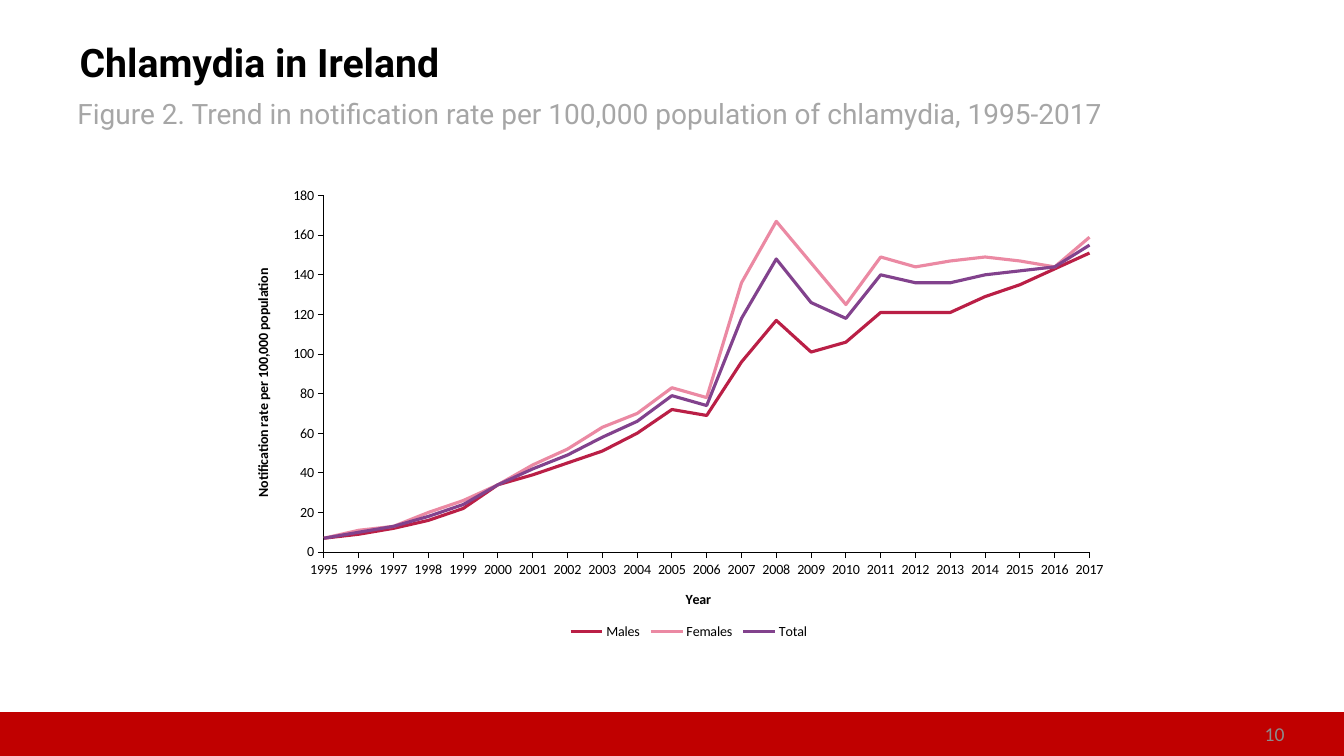
from dataclasses import dataclass

from lxml import etree
from pptx import Presentation
from pptx.chart.axis import CategoryAxis, ValueAxis
from pptx.chart.chart import Chart
from pptx.chart.data import CategoryChartData
from pptx.dml.color import RGBColor
from pptx.enum.chart import XL_CHART_TYPE, XL_LEGEND_POSITION, XL_TICK_MARK
from pptx.enum.shapes import MSO_SHAPE
from pptx.enum.text import MSO_ANCHOR, PP_ALIGN
from pptx.oxml.ns import qn
from pptx.slide import Slide
from pptx.text.text import Font
from pptx.util import Inches, Pt

LINE_CHART = XL_CHART_TYPE.LINE
LEGEND_BOTTOM = XL_LEGEND_POSITION.BOTTOM
TICK_OUTSIDE, TICK_NONE = XL_TICK_MARK.OUTSIDE, XL_TICK_MARK.NONE
RECTANGLE = MSO_SHAPE.RECTANGLE
TOP, MIDDLE = MSO_ANCHOR.TOP, MSO_ANCHOR.MIDDLE
LEFT, RIGHT = PP_ALIGN.LEFT, PP_ALIGN.RIGHT


@dataclass(frozen=True)
class Theme:
    heading_font: str = "Roboto"
    body_font: str = "Calibri"
    black: str = "000000"
    subtitle_grey: str = "A6A6A6"
    number_grey: str = "8C8C8C"
    footer_red: str = "C00000"
    title_size: float = 28
    subtitle_size: float = 20
    number_size: float = 14
    chart_size: float = 10
    footer_border: float = 2
    axis_width: float = 0.75
    trend_width: float = 2.25


@dataclass(frozen=True)
class Box:
    left: float
    top: float
    width: float
    height: float

    def inches(self) -> tuple[Inches, Inches, Inches, Inches]:
        return (Inches(self.left), Inches(self.top),
                Inches(self.width), Inches(self.height))


@dataclass(frozen=True)
class Trend:
    name: str
    color: str
    rates: tuple[int, ...]


THEME = Theme()
SLIDE_WIDTH, SLIDE_HEIGHT = 13.33, 7.5
FOOTER_TOP = 7.08
HEADING_LEFT = 0.67

# Parts of the chart, as fractions of its frame
PLOT_AREA = Box(0.1, 0.04, 0.86, 0.74)
LEGEND_AREA = Box(0.37, 0.92, 0.28, 0.05)

YEARS = [str(year) for year in range(1995, 2018)]
TRENDS = (
    Trend("Males", "BA1F46",
          (7, 9, 12, 16, 22, 34, 39, 45, 51, 60, 72, 69, 96, 117, 101, 106,
           121, 121, 121, 129, 135, 143, 151)),
    Trend("Females", "EB89A3",
          (7, 11, 13, 20, 26, 34, 44, 52, 63, 70, 83, 78, 136, 167, 146, 125,
           149, 144, 147, 149, 147, 144, 159)),
    Trend("Total", "82428D",
          (7, 10, 13, 18, 24, 34, 42, 49, 58, 66, 79, 74, 118, 148, 126, 118,
           140, 136, 136, 140, 142, 144, 155)),
)


def rgb(color: str) -> RGBColor:
    return RGBColor.from_string(color)


def style_font(font: Font, *, name: str, size: float, color: str,
               bold: bool = False) -> None:
    font.name, font.size, font.bold = name, Pt(size), bold
    font.color.rgb = rgb(color)


def add_text(slide: Slide, text: str, box: Box, *, size: float, color: str,
             font: str = THEME.heading_font, bold: bool = False,
             align: PP_ALIGN = LEFT, anchor: MSO_ANCHOR = MIDDLE,
             inset: tuple[float, float] = (0.12, 0.06)) -> None:
    frame = slide.shapes.add_textbox(*box.inches()).text_frame
    frame.word_wrap = True
    frame.vertical_anchor = anchor
    frame.margin_left = frame.margin_right = Inches(inset[0])
    frame.margin_top = frame.margin_bottom = Inches(inset[1])
    paragraph = frame.paragraphs[0]
    paragraph.alignment = align
    run = paragraph.add_run()
    run.text = text
    style_font(run.font, name=font, size=size, color=color, bold=bold)


def add_footer(slide: Slide) -> None:
    band = Box(0, FOOTER_TOP, SLIDE_WIDTH, SLIDE_HEIGHT - FOOTER_TOP)
    footer = slide.shapes.add_shape(RECTANGLE, *band.inches())
    footer.shadow.inherit = False
    footer.fill.solid()
    footer.fill.fore_color.rgb = rgb(THEME.footer_red)
    footer.line.color.rgb = rgb(THEME.footer_red)
    footer.line.width = Pt(THEME.footer_border)


def style_axis(axis: CategoryAxis | ValueAxis, title: str) -> None:
    axis.has_major_gridlines = False
    axis.major_tick_mark, axis.minor_tick_mark = TICK_OUTSIDE, TICK_NONE
    axis.format.line.color.rgb = rgb(THEME.black)
    axis.format.line.width = Pt(THEME.axis_width)
    run = axis.axis_title.text_frame.paragraphs[0].add_run()
    run.text = title
    style_font(run.font, name=THEME.body_font, size=THEME.chart_size,
               color=THEME.black, bold=True)


def manual_layout(area: Box, **target: str) -> etree.ElementBase:
    layout = etree.Element(qn("c:layout"))
    manual = etree.SubElement(layout, qn("c:manualLayout"))
    settings = {**target, "xMode": "edge", "yMode": "edge",
                "x": area.left, "y": area.top, "w": area.width, "h": area.height}
    for tag, value in settings.items():
        etree.SubElement(manual, qn(f"c:{tag}")).set("val", str(value))
    return layout


def place_chart_parts(chart: Chart) -> None:
    plot_area = chart.element.find(".//" + qn("c:plotArea"))
    legend = chart.element.find(".//" + qn("c:legend"))
    for part in (plot_area, legend):
        for automatic_layout in part.findall(qn("c:layout")):
            part.remove(automatic_layout)
    plot_area.insert(0, manual_layout(PLOT_AREA, layoutTarget="inner"))
    legend.find(qn("c:legendPos")).addnext(manual_layout(LEGEND_AREA))


def start_trends_on_axis(chart: Chart) -> None:
    value_axis = chart.element.find(".//" + qn("c:valAx"))
    cross_between = value_axis.find(qn("c:crossBetween"))
    if cross_between is None:
        cross_between = etree.Element(qn("c:crossBetween"))
        value_axis.find(qn("c:crosses")).addnext(cross_between)
    cross_between.set("val", "midCat")


def add_trend_chart(slide: Slide, box: Box) -> None:
    data = CategoryChartData(number_format="0")
    data.categories = YEARS
    for trend in TRENDS:
        data.add_series(trend.name, trend.rates)
    chart = slide.shapes.add_chart(LINE_CHART, *box.inches(), data).chart
    chart.has_title = False
    style_font(chart.font, name=THEME.body_font, size=THEME.chart_size,
               color=THEME.black)

    # Legend and axes
    chart.has_legend = True
    chart.legend.position = LEGEND_BOTTOM
    chart.legend.include_in_layout = False
    style_axis(chart.category_axis, "Year")
    style_axis(chart.value_axis, "Notification rate per 100,000 population")
    chart.value_axis.minimum_scale, chart.value_axis.maximum_scale = 0, 180
    chart.value_axis.major_unit = 20
    start_trends_on_axis(chart)
    place_chart_parts(chart)

    # Trend lines
    plot = chart.plots[0]
    plot.vary_by_categories = False
    for series, trend in zip(plot.series, TRENDS):
        series.smooth = False
        series.format.line.color.rgb = rgb(trend.color)
        series.format.line.width = Pt(THEME.trend_width)


def main() -> None:
    deck = Presentation()
    deck.slide_width, deck.slide_height = Inches(SLIDE_WIDTH), Inches(SLIDE_HEIGHT)
    slide = deck.slides.add_slide(deck.slide_layouts[6])

    # Footer band and slide number
    add_footer(slide)
    add_text(slide, "10", Box(9.75, FOOTER_TOP, 3.11, 0.4), size=THEME.number_size,
             color=THEME.number_grey, font=THEME.body_font, align=RIGHT)

    # Headings
    add_text(slide, "Chlamydia in Ireland", Box(HEADING_LEFT, 0.3, 10.33, 0.62),
             size=THEME.title_size, color=THEME.black, bold=True)
    add_text(slide, "Figure 2. Trend in notification rate per 100,000 population "
             "of chlamydia, 1995-2017", Box(HEADING_LEFT, 0.91, 12, 0.44),
             size=THEME.subtitle_size, color=THEME.subtitle_grey,
             anchor=TOP, inset=(0.1, 0.05))

    # Notification rates by year
    add_trend_chart(slide, Box(2.33, 1.75, 8.83, 4.78))
    deck.save("out.pptx")


if __name__ == "__main__":
    main()
